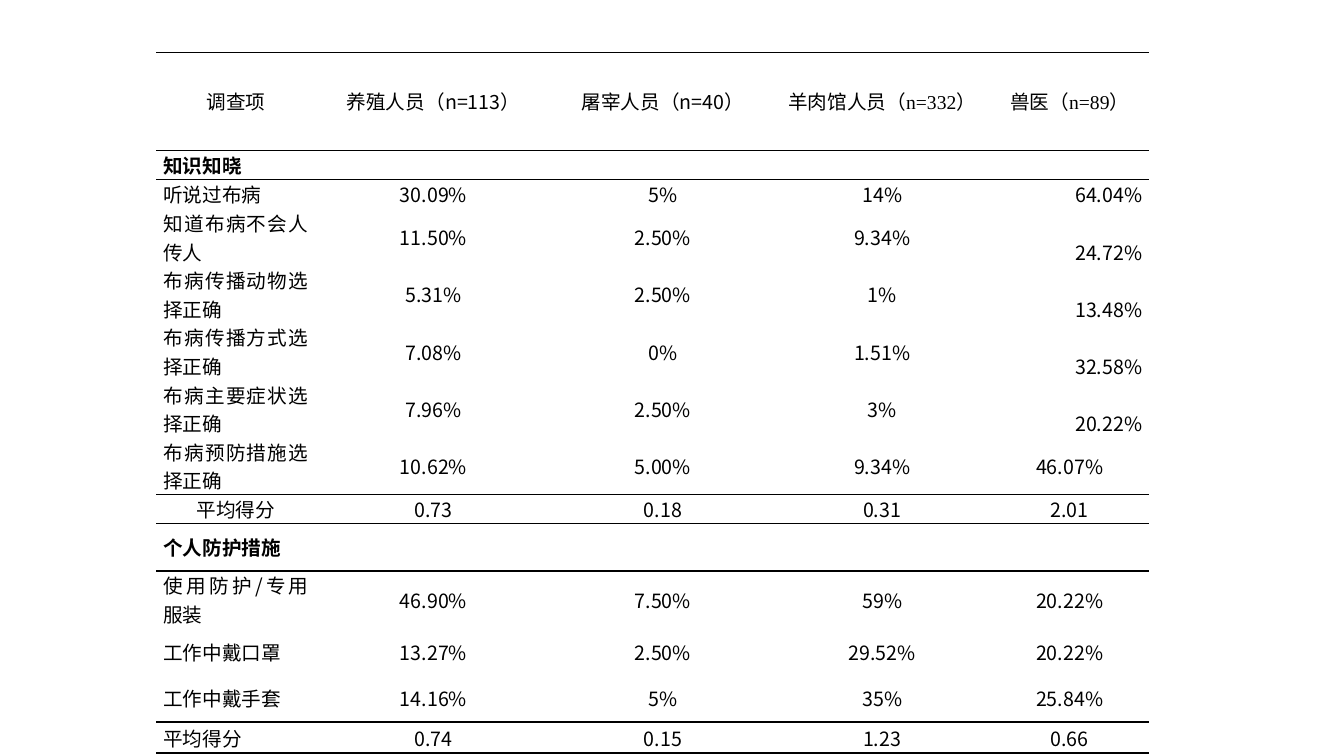
from itertools import groupby

from lxml import etree
from pptx import Presentation
from pptx import util as u
from pptx.dml.color import RGBColor
from pptx.enum import text
from pptx.oxml import ns

SANS, SERIF = "Noto Sans CJK SC", "Times New Roman"
ALIGN, ANCHOR = text.PP_ALIGN, text.MSO_ANCHOR


def color(value):
    return RGBColor.from_string(value)


def add_border(cell, side, points):
    properties = cell._tc.get_or_add_tcPr()
    line = etree.SubElement(properties, ns.qn(f"a:ln{side}"), w=str(u.Pt(points)))
    solid = etree.SubElement(line, ns.qn("a:solidFill"))
    etree.SubElement(solid, ns.qn("a:srgbClr"), val="000000")


survey_rows = [
    (0.97, ["调查项", "养殖人员（n=113）", "屠宰人员（n=40）", "羊肉馆人员（n=332）", "兽医（n=89）"]),
    (0.29, ["知识知晓"]),
    (0.29, ["听说过布病", "30.09%", "5%", "14%", "64.04%"]),
    (0.52, ["知道布病不会人传人", "11.50%", "2.50%", "9.34%", "24.72%"]),
    (0.52, ["布病传播动物选择正确", "5.31%", "2.50%", "1%", "13.48%"]),
    (0.52, ["布病传播方式选择正确", "7.08%", "0%", "1.51%", "32.58%"]),
    (0.52, ["布病主要症状选择正确", "7.96%", "2.50%", "3%", "20.22%"]),
    (0.52, ["布病预防措施选择正确", "10.62%", "5.00%", "9.34%", "46.07%"]),
    (0.29, ["平均得分", "0.73", "0.18", "0.31", "2.01"]),
    (0.47, ["个人防护措施"]),
    (0.52, ["使用防护/专用服装", "46.90%", "7.50%", "59%", "20.22%"]),
    (0.46, ["工作中戴口罩", "13.27%", "2.50%", "29.52%", "20.22%"]),
    (0.47, ["工作中戴手套", "14.16%", "5%", "35%", "25.84%"]),
    (0.31, ["平均得分", "0.74", "0.15", "1.23", "0.66"]),
]
column_widths = [1.58, 2.34, 2.21, 2.14, 1.58]
top_rules = {0: 1.5, 1: 1, 8: 1, 9: 1, 13: 1}
bottom_rules = {0: 1, 7: 1, 8: 1, 12: 1, 13: 1.5}
centered_labels = (0, 8)
bottom_right_rows = range(2, 7)
cell_margins = {"margin_left": 0.07, "margin_right": 0.07, "margin_top": 0, "margin_bottom": 0}

deck = Presentation()
deck.slide_width, deck.slide_height = u.Inches(13.33), u.Inches(7.5)
slide = deck.slides.add_slide(deck.slide_layouts[6])
survey = slide.shapes.add_table(
    len(survey_rows), len(column_widths),
    u.Inches(1.55), u.Inches(0.52), u.Inches(9.84), u.Inches(6.69),
).table
survey.first_row = survey.horz_banding = False
survey._tbl.tblPr.find(ns.qn("a:tableStyleId")).text = "{2D5ABB26-0587-4C30-8999-92F81FD0307C}"

for column, width in zip(survey.columns, column_widths):
    column.width = u.Inches(width)

for row, (height, entries) in enumerate(survey_rows):
    survey.rows[row].height = u.Inches(height)
    is_section = len(entries) == 1
    for col in range(len(column_widths)):
        cell = survey.cell(row, col)
        for side, rules in (("T", top_rules), ("B", bottom_rules)):
            if row in rules:
                add_border(cell, side, rules[row])
        cell.fill.background()
        for margin, inches in cell_margins.items():
            setattr(cell, margin, u.Inches(inches))
        cell.vertical_anchor = ANCHOR.MIDDLE
        if col >= len(entries):
            continue
        paragraph = cell.text_frame.paragraphs[0]
        paragraph.alignment = ALIGN.CENTER
        if is_section:
            paragraph.alignment = ALIGN.LEFT
        elif col == 0 and row not in centered_labels:
            paragraph.alignment = ALIGN.JUSTIFY
        elif col == 4 and row in bottom_right_rows:
            paragraph.alignment = ALIGN.RIGHT
            cell.vertical_anchor = ANCHOR.BOTTOM
        for is_latin, characters in groupby(entries[col], str.isascii):
            run = paragraph.add_run()
            run.text = "".join(characters)
            serif = not is_latin or (row == 0 and col >= 3)
            font_format = {"size": u.Pt(14), "bold": is_section, "name": SERIF if serif else SANS}
            for attribute, value in font_format.items():
                setattr(run.font, attribute, value)
            run.font.color.rgb = color("000000")
            etree.SubElement(run.font._element, ns.qn("a:ea"), typeface=SANS)
    if is_section:
        survey.cell(row, 0).merge(survey.cell(row, len(column_widths) - 1))

deck.save("out.pptx")
